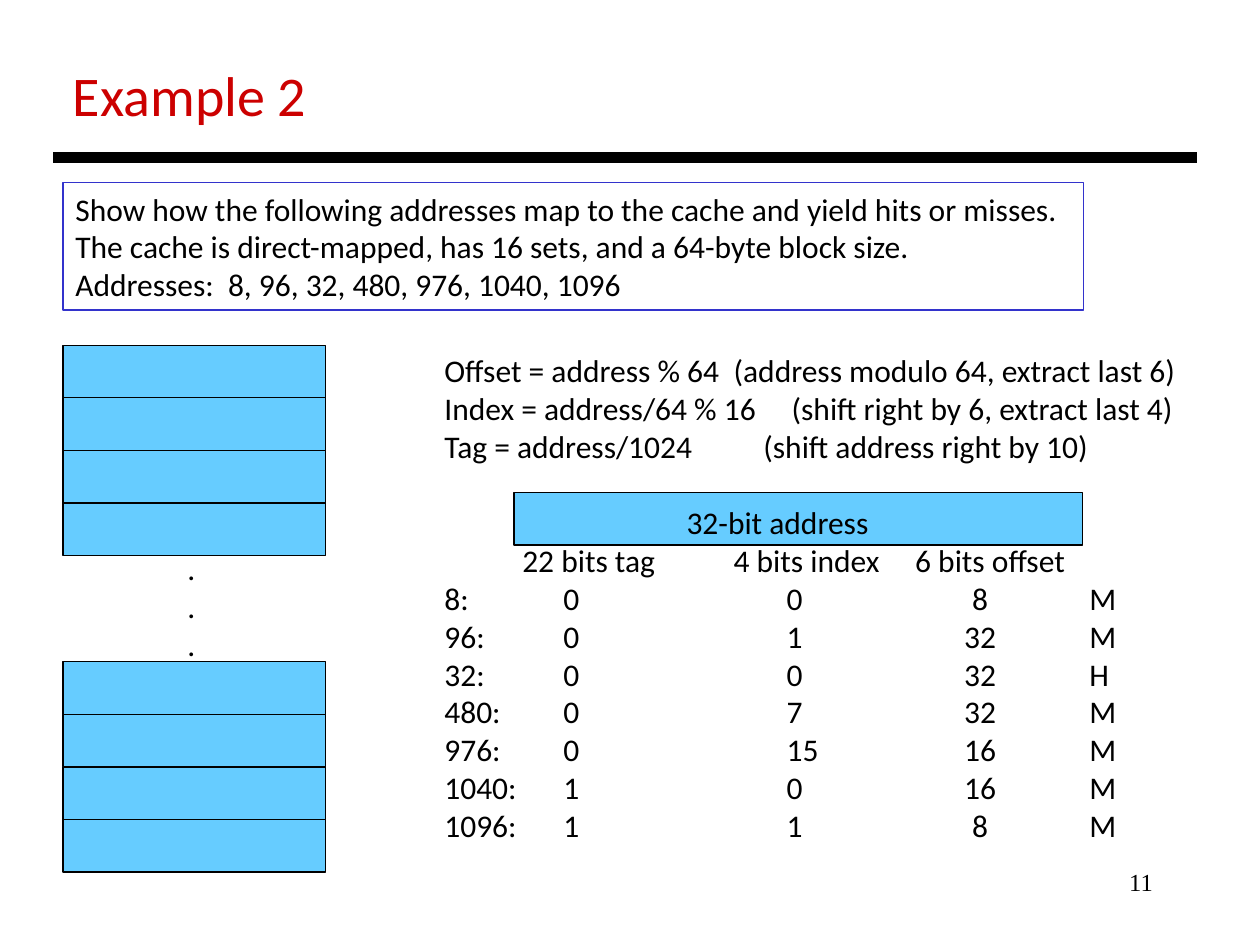
from lxml.etree import SubElement
from pptx import Presentation
from pptx.dml.color import RGBColor
from pptx.enum.shapes import MSO_CONNECTOR, MSO_SHAPE
from pptx.enum.text import PP_ALIGN
from pptx.oxml.ns import qn
from pptx.util import Cm, Pt

PROMPT = [
    "Show how the following addresses map to the cache and yield hits or misses.",
    "The cache is direct-mapped, has 16 sets, and a 64-byte block size.",
    "Addresses:  8, 96, 32, 480, 976, 1040, 1096",
]
RULES = [
    ("Offset = address % 64", "(address modulo 64, extract last 6)", 5.83),
    ("Index = address/64 % 16", "(shift right by 6, extract last 4)", 7),
    ("Tag = address/1024", "(shift address right by 10)", 6.43),
]
HEADS = ["22 bits tag", "4 bits index", "6 bits offset"]
ROWS = [
    (8, 0, 0, 8, "M"),
    (96, 0, 1, 32, "M"),
    (32, 0, 0, 32, "H"),
    (480, 0, 7, 32, "M"),
    (976, 0, 15, 16, "M"),
    (1040, 1, 0, 16, "M"),
    (1096, 1, 1, 8, "M"),
]
HEAD_TABS = [(1.57, "l"), (5.83, "l"), (9.49, "l")]
ROW_TABS = [(2.4, "l"), (6.9, "l"), (10.8, "ctr"), (13, "l")]


def paint(hue):
    return RGBColor.from_string(hue)


def add_rect(slide, x, y, w, h, fill=None, line="000000"):
    rect = slide.shapes.add_shape(MSO_SHAPE.RECTANGLE, Cm(x), Cm(y), Cm(w), Cm(h))
    rect.shadow.inherit = False
    if fill:
        rect.fill.solid()
        rect.fill.fore_color.rgb = paint(fill)
    else:
        rect.fill.background()
    rect.line.color.rgb = paint(line)
    rect.line.width = Pt(0.75)
    return rect


def add_stack(slide, x, y, count):
    for i in range(count):
        add_rect(slide, x, y + i * 1.06, 5.29, 1.06, "66CCFF")


def add_rule(slide, x, y, end):
    rule = slide.shapes.add_connector(MSO_CONNECTOR.STRAIGHT, Cm(x), Cm(y), Cm(end), Cm(y))
    rule.line.color.rgb = paint("000000")
    rule.line.width = Pt(6)
    SubElement(rule._element.spPr, qn("a:effectLst"))


def set_tabs(para, tabs):
    stops = SubElement(para._p.get_or_add_pPr(), qn("a:tabLst"))
    for pos, side in tabs:
        SubElement(stops, qn("a:tab"), pos=str(int(Cm(pos))), algn=side)


def style(para, size=18, face="Calibri", hue="000000", align=PP_ALIGN.LEFT):
    para.alignment = align
    para.font.size = Pt(size)
    para.font.name = face
    para.font.color.rgb = paint(hue)


def write(shape, lines, tabs=None, **look):
    frame = shape.text_frame
    frame.word_wrap = True
    frame.text = "\n".join(lines)
    for i, para in enumerate(frame.paragraphs):
        if tabs:
            set_tabs(para, tabs[i])
        style(para, **look)
    return frame


def add_text(slide, x, y, w, h, lines, tabs=None, **look):
    box = slide.shapes.add_textbox(Cm(x), Cm(y), Cm(w), Cm(h))
    return write(box, lines, tabs, **look)


def add_work(slide):
    lines = [f"{rule}\t{note}" for rule, note, _ in RULES]
    tabs = [[(pos, "l")] for _, _, pos in RULES]
    lines += ["\t32-bit address", "\t" + "\t".join(HEADS)]
    tabs += [[(4.88, "l")], HEAD_TABS]
    for addr, *vals in ROWS:
        lines.append("\t".join([f"{addr}:", *map(str, vals)]))
        tabs.append(ROW_TABS)
    frame = add_text(slide, 8.71, 6.96, 15.42, 10.26, lines, tabs)
    frame.paragraphs[len(RULES)].space_before = Pt(22)


def main():
    deck = Presentation()
    deck.slide_width, deck.slide_height = Cm(25.4), Cm(19.05)
    slide = deck.slides.add_slide(deck.slide_layouts[6])
    add_text(slide, 1.22, 1.09, 5.3, 1.63, ["Example 2"], size=32, hue="CC0000")
    add_rule(slide, 1.07, 3.18, 24.13)
    write(add_rect(slide, 1.27, 3.68, 20.57, 2.57, line="3333CC"), PROMPT)
    add_stack(slide, 1.27, 6.96, 4)
    add_text(slide, 3.53, 10.95, 0.69, 2.57, ["."] * 3)
    add_stack(slide, 1.27, 13.34, 4)
    add_rect(slide, 10.36, 9.93, 11.46, 1.06, "66CCFF")
    add_work(slide)
    add_text(slide, 18.21, 17.35, 5.28, 1.27, ["11"], size=14,
             face="Times New Roman", align=PP_ALIGN.RIGHT)
    deck.save("out.pptx")


if __name__ == "__main__":
    main()
